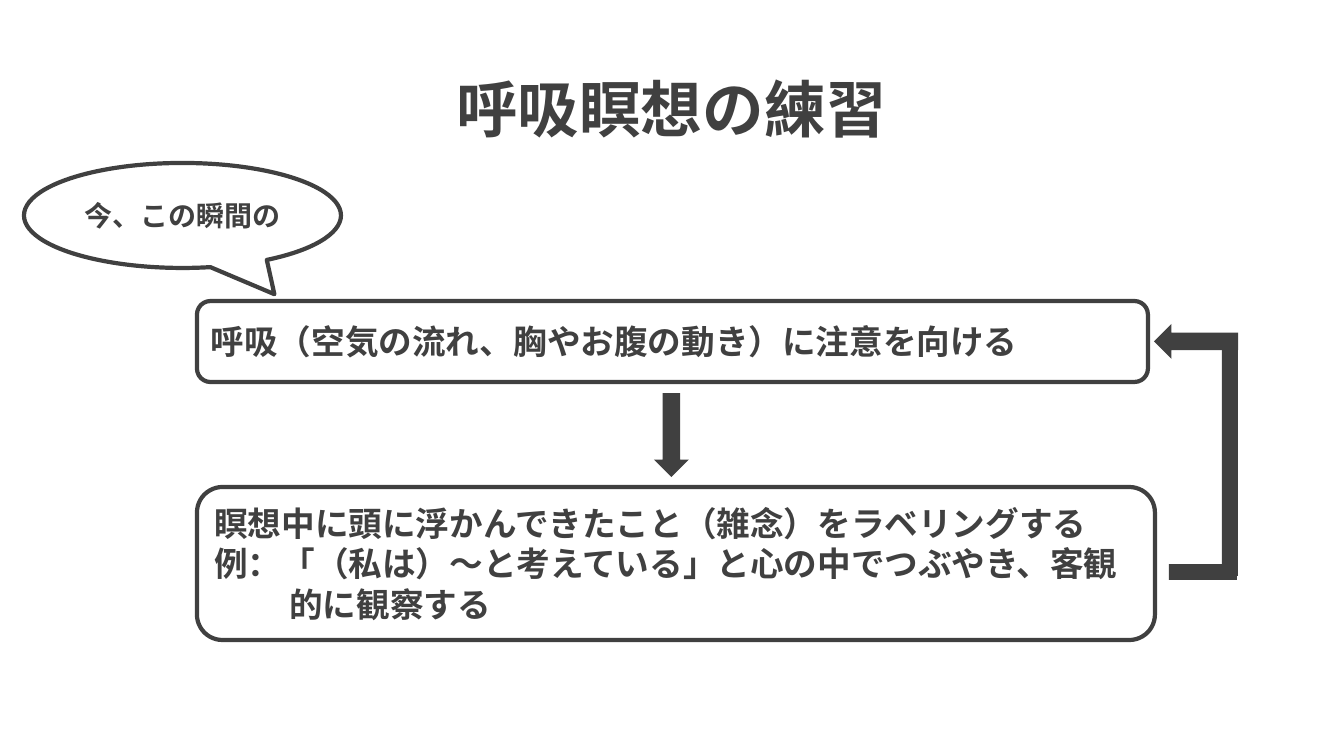
from dataclasses import dataclass

from lxml import etree
from pptx import Presentation
from pptx.dml.color import RGBColor
from pptx.enum.shapes import MSO_SHAPE
from pptx.enum.text import MSO_ANCHOR, PP_ALIGN
from pptx.oxml.ns import qn
from pptx.util import Pt

ROUNDED, CALLOUT, BAR = MSO_SHAPE.ROUNDED_RECTANGLE, MSO_SHAPE.OVAL_CALLOUT, MSO_SHAPE.RECTANGLE
DOWN, LEFT_ARROW = MSO_SHAPE.DOWN_ARROW, MSO_SHAPE.LEFT_ARROW
MIDDLE = MSO_ANCHOR.MIDDLE
LEFT, CENTER = PP_ALIGN.LEFT, PP_ALIGN.CENTER


@dataclass(frozen=True)
class Theme:
    font: str = "Noto Sans CJK JP"
    ink: RGBColor = RGBColor(0x40, 0x40, 0x40)
    paper: RGBColor = RGBColor(0xFF, 0xFF, 0xFF)
    title: int = 44
    body: int = 24
    callout: int = 20
    outline: int = 3


THEME = Theme()
EMU_PER_INCH, PX_PER_INCH = 914400, 100.8
SLIDE_SIZE = (1344, 756)

TITLE = "呼吸瞑想の練習"
TITLE_PLACE = (92, 40, 1160, 146)
STEPS = [
    ((197, 301, 951, 81), [("呼吸（空気の流れ、胸やお腹の動き）に注意を向ける", 0)]),
    ((197, 487, 958, 153), [
        ("瞑想中に頭に浮かんできたこと（雑念）をラベリングする", 0),
        ("例：「（私は）～と考えている」と心の中でつぶやき、客観", 0),
        ("的に観察する", 75),
    ]),
]
FLOW = [
    (DOWN, (654, 393, 35, 84)),
    (LEFT_ARROW, (1154, 324, 84, 35)),
    (BAR, (1222, 350, 16, 226)),
    (BAR, (1169, 564, 68, 16)),
]
BUBBLE_LINES = [("今、この瞬間の", 0)]
BUBBLE_PLACE = (24, 163, 317, 105)
BUBBLE_TAIL = (0.29, 0.75)


def px(length):
    return round(length * EMU_PER_INCH / PX_PER_INCH)


def set_format(target, values):
    for name, value in values.items():
        setattr(target, name, value)


def write(frame, lines, size, align):
    set_format(frame, {"word_wrap": True, "vertical_anchor": MIDDLE})
    for index, (words, indent) in enumerate(lines):
        para = frame.paragraphs[0] if index == 0 else frame.add_paragraph()
        para.alignment = align
        if indent:
            para._p.get_or_add_pPr().set("marL", str(px(indent)))
        span = para.add_run()
        span.text = words
        set_format(span.font, {"name": THEME.font, "size": Pt(size), "bold": True})
        span.font.color.rgb = THEME.ink
        east_asian = etree.SubElement(span._r.get_or_add_rPr(), qn("a:ea"))
        east_asian.set("typeface", THEME.font)


def add_figure(page, kind, place, fill, outlined):
    figure = page.shapes.add_shape(kind, *map(px, place))
    figure.shadow.inherit = False
    figure.fill.solid()
    figure.fill.fore_color.rgb = fill
    if outlined:
        figure.line.color.rgb = THEME.ink
        figure.line.width = Pt(THEME.outline)
    else:
        figure.line.fill.background()
    return figure


def add_title(page):
    title = page.shapes.title
    set_format(title, dict(zip(("left", "top", "width", "height"), map(px, TITLE_PLACE))))
    write(title.text_frame, [(TITLE, 0)], THEME.title, CENTER)
    title.text_frame.paragraphs[0].line_spacing = 0.9


def main():
    deck = Presentation()
    deck.slide_width, deck.slide_height = map(px, SLIDE_SIZE)
    page = deck.slides.add_slide(deck.slide_layouts[5])
    add_title(page)
    for place, lines in STEPS:
        box = add_figure(page, ROUNDED, place, THEME.paper, True)
        write(box.text_frame, lines, THEME.body, LEFT)
    for kind, place in FLOW:
        add_figure(page, kind, place, THEME.ink, False)
    bubble = add_figure(page, CALLOUT, BUBBLE_PLACE, THEME.paper, True)
    for index, value in enumerate(BUBBLE_TAIL):
        bubble.adjustments[index] = value
    write(bubble.text_frame, BUBBLE_LINES, THEME.callout, CENTER)
    deck.save("out.pptx")


if __name__ == "__main__":
    main()
